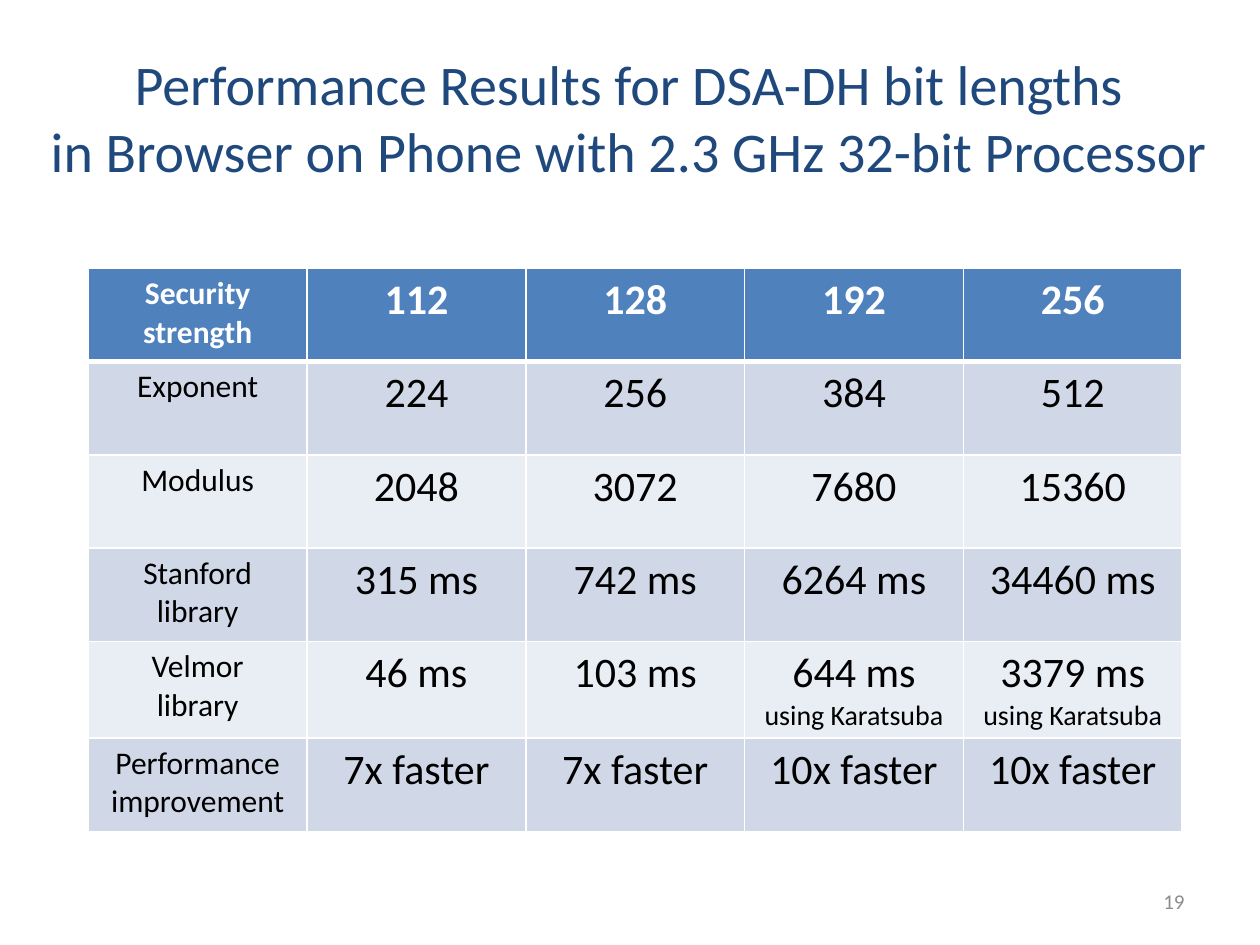
import pptx
import pptx.util
import pptx.dml.color
import pptx.enum.text
import pptx.oxml.ns
from lxml import etree

Cm = pptx.util.Cm
Pt = pptx.util.Pt
RGBColor = pptx.dml.color.RGBColor
PP_ALIGN = pptx.enum.text.PP_ALIGN
qn = pptx.oxml.ns.qn

NAVY = RGBColor(0x1F, 0x49, 0x7D)
GRAY = RGBColor(0x8C, 0x8C, 0x8C)
WHITE = RGBColor(0xFF, 0xFF, 0xFF)
BLACK = RGBColor(0x00, 0x00, 0x00)
HEADER_BLUE = RGBColor(0x4F, 0x81, 0xBD)
BANDS = [RGBColor(0xD0, 0xD8, 0xE8), RGBColor(0xE9, 0xED, 0xF4)]

FONT = "Calibri"
TITLE = "Performance Results for DSA-DH bit lengths\vin Browser on Phone with 2.3 GHz 32-bit Processor"
PAGE_NUMBER = "19"
ROWS = [
    ["Security strength", "112", "128", "192", "256"],
    ["Exponent", "224", "256", "384", "512"],
    ["Modulus", "2048", "3072", "7680", "15360"],
    ["Stanford\nlibrary", "315 ms", "742 ms", "6264 ms", "34460 ms"],
    ["Velmor\nlibrary", "46 ms", "103 ms", "644 ms\nusing Karatsuba", "3379 ms\nusing Karatsuba"],
    ["Performance\nimprovement", "7x faster", "7x faster", "10x faster", "10x faster"],
]
LABEL_SIZE, VALUE_SIZE, NOTE_SIZE = 18, 24, 16
COLUMN_WIDTH, ROW_HEIGHT = Cm(4.41), Cm(1.88)


def style(paragraph, size, color, alignment, bold=False):
    paragraph.alignment = alignment
    paragraph.font.name = FONT
    paragraph.font.size = Pt(size)
    paragraph.font.bold = bold
    paragraph.font.color.rgb = color


def add_text(slide, text, left, top, width, height, size, color, alignment):
    shape = slide.shapes.add_textbox(Cm(left), Cm(top), Cm(width), Cm(height))
    frame = shape.text_frame
    frame.word_wrap = True
    frame.vertical_anchor = pptx.enum.text.MSO_ANCHOR.MIDDLE
    frame.text = text
    style(frame.paragraphs[0], size, color, alignment)


def add_borders(cell, widths):
    properties = cell._tc.get_or_add_tcPr()
    for side, width in widths.items():
        line = etree.SubElement(properties, qn(f"a:ln{side}"), w=str(Pt(width)))
        fill = etree.SubElement(line, qn("a:solidFill"))
        etree.SubElement(fill, qn("a:srgbClr"), val=str(WHITE))


def fill_cell(cell, text, row, column):
    header = row == 0
    add_borders(cell, {"L": 1, "R": 1, "T": 3 if row == 1 else 1, "B": 3 if header else 1})
    cell.fill.solid()
    cell.fill.fore_color.rgb = HEADER_BLUE if header else BANDS[(row - 1) % 2]
    cell.text = text
    for index, paragraph in enumerate(cell.text_frame.paragraphs):
        size = LABEL_SIZE if column == 0 else NOTE_SIZE if index else VALUE_SIZE
        style(paragraph, size, WHITE if header else BLACK, PP_ALIGN.CENTER, header)


def add_results_table(slide):
    row_count, column_count = len(ROWS), len(ROWS[0])
    table = slide.shapes.add_table(
        row_count, column_count, Cm(1.78), Cm(5.41),
        COLUMN_WIDTH * column_count, ROW_HEIGHT * row_count,
    ).table
    for row, texts in enumerate(ROWS):
        for column, text in enumerate(texts):
            fill_cell(table.cell(row, column), text, row, column)


def main():
    presentation = pptx.Presentation()
    presentation.slide_width, presentation.slide_height = Cm(25.4), Cm(19.05)
    slide = presentation.slides.add_slide(presentation.slide_layouts[6])
    add_text(slide, TITLE, 0.53, 0.76, 24.31, 3.18, 32, NAVY, PP_ALIGN.CENTER)
    add_text(slide, PAGE_NUMBER, 18.2, 17.66, 5.93, 1.01, 12, GRAY, PP_ALIGN.RIGHT)
    add_results_table(slide)
    presentation.save("out.pptx")


if __name__ == "__main__":
    main()
